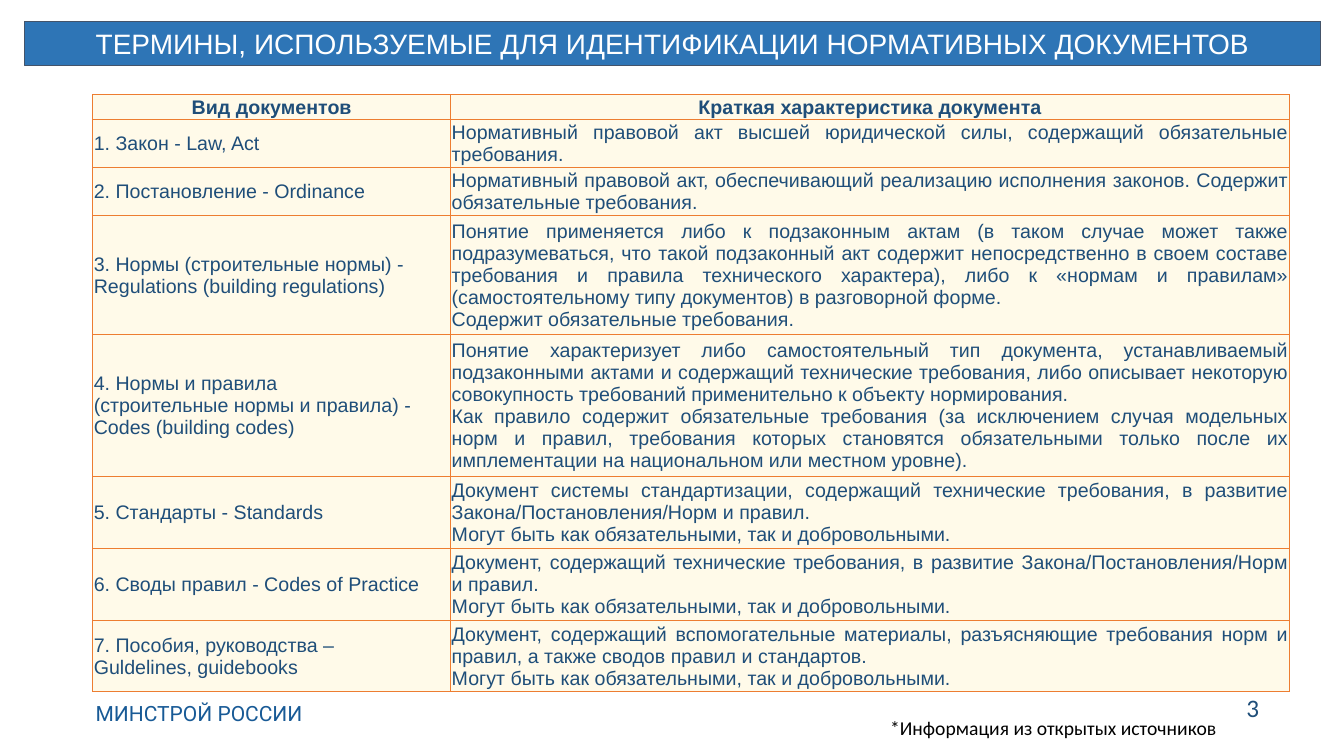
from lxml import etree
from pptx import Presentation
from pptx import util as u
from pptx.dml import color
from pptx.enum import text as t
from pptx.oxml import ns

PX = 9144
WHITE = color.RGBColor(0xFF, 0xFF, 0xFF)
BLACK = color.RGBColor(0, 0, 0)
BLUE = color.RGBColor(0x2E, 0x75, 0xB6)
SLATE = color.RGBColor(0x44, 0x54, 0x6A)
NAVY = color.RGBColor(0x1F, 0x4E, 0x79)
MINISTRY_BLUE = color.RGBColor(0x18, 0x5A, 0x96)
CREAM = color.RGBColor(0xFF, 0xFA, 0xE9)
ORANGE = color.RGBColor(0xED, 0x7D, 0x31)

LEFT, CENTER, JUSTIFY = t.PP_ALIGN.LEFT, t.PP_ALIGN.CENTER, t.PP_ALIGN.JUSTIFY

TITLE = "ТЕРМИНЫ, ИСПОЛЬЗУЕМЫЕ ДЛЯ ИДЕНТИФИКАЦИИ НОРМАТИВНЫХ ДОКУМЕНТОВ"
EITHER_FORCE = "Могут быть как обязательными, так и добровольными."
HEADINGS = ("Вид документов", "Краткая характеристика документа")
COLUMN_WIDTHS = (355, 832)
HEADING_HEIGHT = 24

DOCUMENTS = [
    (47, "1. Закон - Law, Act",
     ["Нормативный правовой акт высшей юридической силы, содержащий обязательные требования."]),
    (47, "2. Постановление - Ordinance",
     ["Нормативный правовой акт, обеспечивающий реализацию исполнения законов. "
      "Содержит обязательные требования."]),
    (118, "3. Нормы (строительные нормы) - Regulations (building regulations)",
     ["Понятие применяется либо к подзаконным актам (в таком случае может также подразумеваться, "
      "что такой подзаконный акт содержит непосредственно в своем составе требования и правила "
      "технического характера), либо к «нормам и правилам» (самостоятельному типу документов) "
      "в разговорной форме.",
      "Содержит обязательные требования."]),
    (140, "4. Нормы и правила\n(строительные нормы и правила) - Codes (building codes)",
     ["Понятие характеризует либо самостоятельный тип документа, устанавливаемый подзаконными "
      "актами и содержащий технические требования, либо описывает некоторую совокупность "
      "требований применительно к объекту нормирования.",
      "Как правило содержит обязательные требования (за исключением случая модельных норм и "
      "правил, требования которых становятся обязательными только после их имплементации на "
      "национальном или местном уровне)."]),
    (71, "5. Стандарты - Standards",
     ["Документ системы стандартизации, содержащий технические требования, в развитие "
      "Закона/Постановления/Норм и правил.",
      EITHER_FORCE]),
    (71, "6. Своды правил - Codes of Practice",
     ["Документ, содержащий технические требования, в развитие Закона/Постановления/Норм и правил.",
      EITHER_FORCE]),
    (71, "7. Пособия, руководства –\nGuldelines, guidebooks",
     ["Документ, содержащий вспомогательные материалы, разъясняющие требования норм и правил, "
      "а также сводов правил и стандартов.",
      EITHER_FORCE]),
]


def apply(target, values):
    for name, value in values.items():
        setattr(target, name, value)


def place(left, top, width, height):
    return dict(left=left * PX, top=top * PX, width=width * PX, height=height * PX)


def write(frame, paragraphs, alignment, font_color, **font):
    for index, words in enumerate(paragraphs):
        paragraph = frame.add_paragraph() if index else frame.paragraphs[0]
        paragraph.text = words
        paragraph.alignment = alignment
        apply(paragraph.font, font)
        paragraph.font.color.rgb = font_color


def add_title(slide):
    title = slide.shapes.title
    apply(title, place(24, 21, 1286, 44))
    title.fill.solid()
    title.fill.fore_color.rgb = BLUE
    title.line.color.rgb = SLATE
    title.line.width = u.Pt(0.75)
    apply(title.text_frame, dict(auto_size=t.MSO_AUTO_SIZE.NONE, word_wrap=True,
                                 vertical_anchor=t.MSO_ANCHOR.MIDDLE))
    write(title.text_frame, [TITLE], CENTER, WHITE, name="Arial", size=u.Pt(20))


def add_label(slide, box, words, alignment, font_color, **font):
    label = slide.shapes.add_textbox(**place(*box))
    label.text_frame.word_wrap = True
    write(label.text_frame, [words], alignment, font_color, **font)


def add_borders(cell):
    properties = cell._tc.get_or_add_tcPr()
    for side in ("lnL", "lnR", "lnT", "lnB"):
        line = etree.SubElement(properties, ns.qn("a:" + side), w=str(u.Pt(0.5)))
        fill = etree.SubElement(line, ns.qn("a:solidFill"))
        etree.SubElement(fill, ns.qn("a:srgbClr"), val=str(ORANGE))


def fill_cell(cell, paragraphs, alignment, bold):
    apply(cell, dict(margin_left=PX, margin_right=PX, margin_top=PX, margin_bottom=0,
                     vertical_anchor=t.MSO_ANCHOR.MIDDLE))
    add_borders(cell)
    cell.fill.solid()
    cell.fill.fore_color.rgb = CREAM
    write(cell.text_frame, paragraphs, alignment, NAVY, name="Arial", size=u.Pt(14), bold=bold)


def add_documents_table(slide):
    heights = [HEADING_HEIGHT] + [height for height, _, _ in DOCUMENTS]
    box = place(92, 94, sum(COLUMN_WIDTHS), sum(heights))
    table = slide.shapes.add_table(len(heights), len(COLUMN_WIDTHS), **box).table
    apply(table, dict(first_row=False, horz_banding=False))
    for column, width in zip(table.columns, COLUMN_WIDTHS):
        column.width = width * PX
    for row, height in zip(table.rows, heights):
        row.height = height * PX
    for index, heading in enumerate(HEADINGS):
        fill_cell(table.cell(0, index), [heading], CENTER, True)
    for index, (_, kind, description) in enumerate(DOCUMENTS, 1):
        fill_cell(table.cell(index, 0), [kind], LEFT, False)
        fill_cell(table.cell(index, 1), description, JUSTIFY, False)


def main():
    presentation = Presentation()
    apply(presentation, dict(slide_width=1333 * PX, slide_height=750 * PX))
    slide = presentation.slides.add_slide(presentation.slide_layouts[5])
    add_label(slide, (85, 690, 913, 35), "МИНСТРОЙ РОССИИ", LEFT, MINISTRY_BLUE,
              name="Roboto", size=u.Pt(15))
    add_title(slide)
    add_documents_table(slide)
    add_label(slide, (1205, 682, 75, 40), "3", CENTER, NAVY, name="Calibri", size=u.Pt(18))
    add_label(slide, (873, 705, 466, 34), "*Информация из открытых источников", LEFT, BLACK,
              name="Calibri", size=u.Pt(14))
    presentation.save("out.pptx")


if __name__ == "__main__":
    main()
